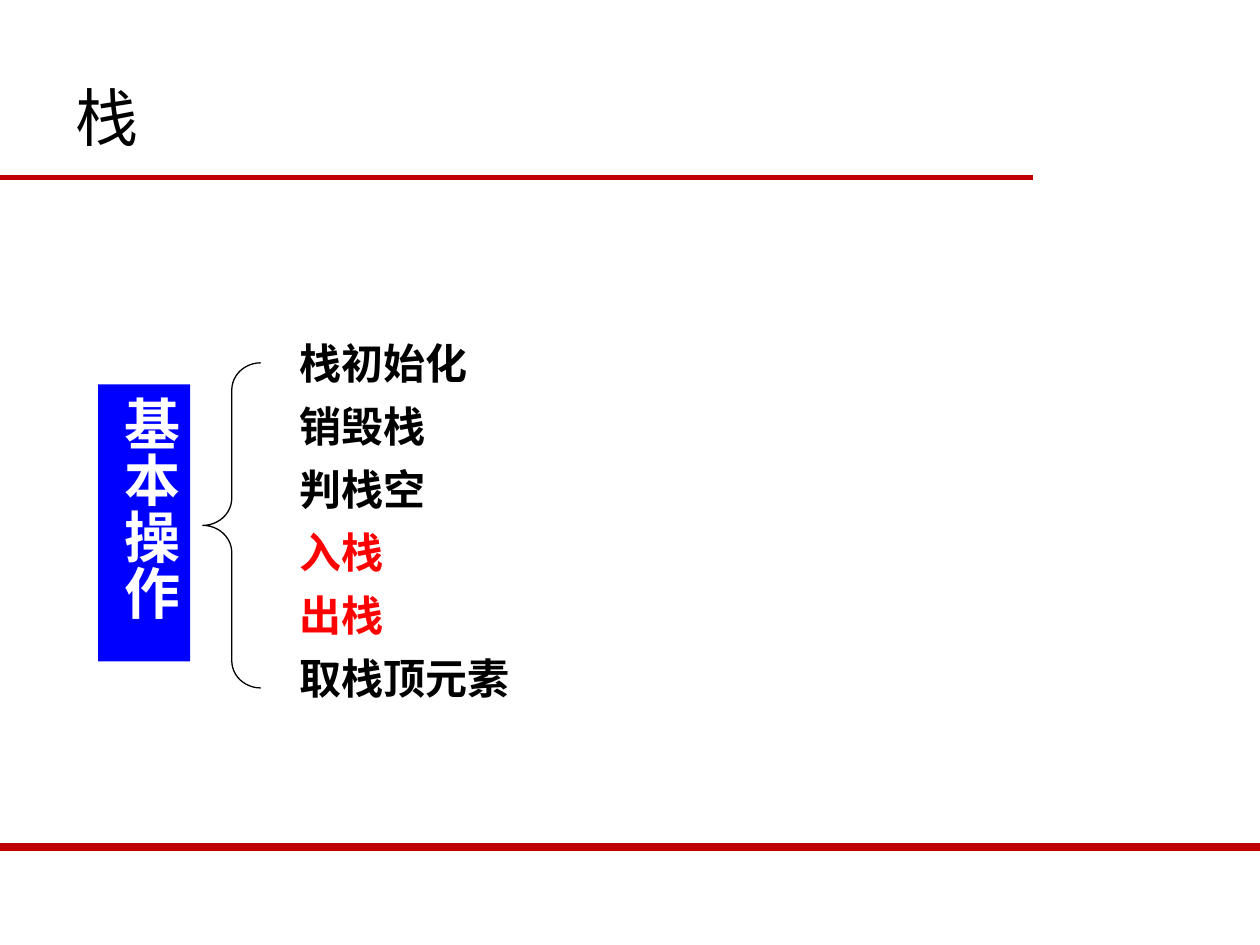
from dataclasses import dataclass

from lxml.etree import SubElement
from pptx import Presentation
from pptx.dml.color import RGBColor
from pptx.enum.shapes import MSO_CONNECTOR, MSO_SHAPE
from pptx.enum.text import MSO_ANCHOR, PP_ALIGN
from pptx.oxml.ns import qn
from pptx.util import Inches, Pt


@dataclass(frozen=True)
class Theme:
    black: RGBColor = RGBColor(0, 0, 0)
    white: RGBColor = RGBColor(255, 255, 255)
    highlight: RGBColor = RGBColor(255, 0, 0)
    panel: RGBColor = RGBColor(0, 0, 255)
    rule: RGBColor = RGBColor(0xC0, 0, 0)
    title_size: int = 36
    panel_size: int = 32
    item_size: int = 24
    title_font: str = "Noto Sans CJK SC"
    panel_font: str = "Comic Neue"
    item_font: str = "Calibri"
    chinese_font: str = "Noto Sans CJK SC"


@dataclass(frozen=True)
class Rule:
    top: float
    length: float
    weight: float


@dataclass(frozen=True)
class Operation:
    text: str
    highlighted: bool = False


THEME = Theme()
RULES = (Rule(1.41, 8.2, 3), Rule(6.72, 10, 4.5))
OPERATIONS = (
    Operation("栈初始化"),
    Operation("销毁栈"),
    Operation("判栈空"),
    Operation("入栈", True),
    Operation("出栈", True),
    Operation("取栈顶元素"),
)
LIST_LEFT, LIST_TOP = 2.28, 2.63
ITEM_WIDTH, ITEM_HEIGHT = 2.75, 0.5


def write_text(frame, text: str, font_name: str, size: int,
               color: RGBColor, bold: bool) -> None:
    """Fill the frame with one left-aligned paragraph, with a Chinese font."""
    paragraph = frame.paragraphs[0]
    paragraph.alignment = PP_ALIGN.LEFT
    span = paragraph.add_run()
    span.text = text
    SubElement(span.font._element, qn("a:ea"), typeface=THEME.chinese_font)
    font = paragraph.font
    font.name = font_name
    font.size = Pt(size)
    font.bold = bold
    font.color.rgb = color


def add_rule(page, rule: Rule) -> None:
    line = page.shapes.add_connector(
        MSO_CONNECTOR.STRAIGHT, 0, Inches(rule.top),
        Inches(rule.length), Inches(rule.top))
    line.line.color.rgb = THEME.rule
    line.line.width = Pt(rule.weight)
    SubElement(line._element.spPr, qn("a:effectLst"))


def set_title(page, text: str) -> None:
    title = page.shapes.title
    title.left, title.top = Inches(0.5), Inches(0.3)
    title.width, title.height = Inches(9), Inches(1.25)
    title.text_frame.vertical_anchor = MSO_ANCHOR.MIDDLE
    write_text(title.text_frame, text, THEME.title_font,
               THEME.title_size, THEME.black, False)


def add_vertical_panel(page, text: str) -> None:
    panel = page.shapes.add_shape(
        MSO_SHAPE.RECTANGLE, Inches(0.78), Inches(3.05),
        Inches(0.73), Inches(2.2))
    panel.shadow.inherit = False
    panel.fill.solid()
    panel.fill.fore_color.rgb = THEME.panel
    panel.line.fill.background()
    frame = panel.text_frame
    frame.vertical_anchor = MSO_ANCHOR.TOP
    frame._txBody.bodyPr.set("vert", "eaVert")
    write_text(frame, text, THEME.panel_font,
               THEME.panel_size, THEME.white, True)


def add_brace(page) -> None:
    brace = page.shapes.add_shape(
        MSO_SHAPE.LEFT_BRACE, Inches(1.61), Inches(2.88),
        Inches(0.46), Inches(2.58))
    brace.shadow.inherit = False
    brace.adjustments[0] = 0.47
    brace.fill.background()
    brace.line.color.rgb = THEME.black
    brace.line.width = Pt(0.75)


def add_operation(page, operation: Operation, row: int) -> None:
    box = page.shapes.add_textbox(
        Inches(LIST_LEFT), Inches(LIST_TOP + row * ITEM_HEIGHT),
        Inches(ITEM_WIDTH), Inches(ITEM_HEIGHT))
    box.text_frame.word_wrap = True
    color = THEME.highlight if operation.highlighted else THEME.black
    write_text(box.text_frame, operation.text, THEME.item_font,
               THEME.item_size, color, True)


def main() -> None:
    deck = Presentation()
    deck.slide_width, deck.slide_height = Inches(10), Inches(7.5)
    page = deck.slides.add_slide(deck.slide_layouts.get_by_name("Title Only"))
    for rule in RULES:
        add_rule(page, rule)
    set_title(page, "栈")
    add_vertical_panel(page, "基本操作")
    add_brace(page)
    for row, operation in enumerate(OPERATIONS):
        add_operation(page, operation, row)
    deck.save("out.pptx")


if __name__ == "__main__":
    main()
